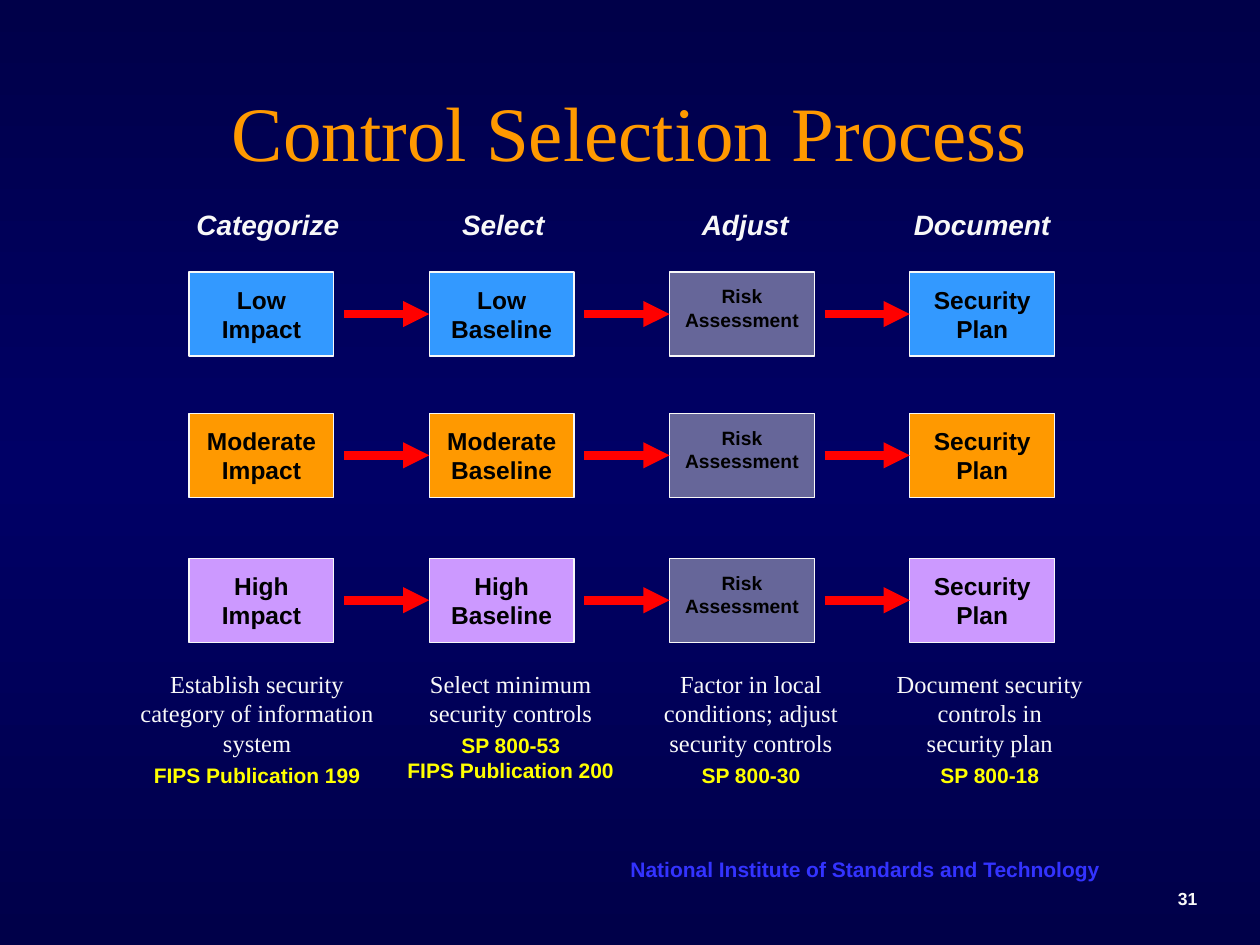
from copy import deepcopy

from lxml import etree
from pptx import Presentation
from pptx.dml.color import RGBColor
from pptx.enum import shapes, text
from pptx.oxml import ns
from pptx.util import Pt

NAVY = RGBColor(0x00, 0x00, 0x49)
DEEP_BLUE = RGBColor(0x00, 0x00, 0x66)
LINK_BLUE = RGBColor(0x33, 0x33, 0xFF)
BLUE = RGBColor(0x33, 0x99, 0xFF)
ORANGE = RGBColor(0xFF, 0x99, 0x00)
LILAC = RGBColor(0xCC, 0x99, 0xFF)
SLATE = RGBColor(0x66, 0x66, 0x99)
RED = RGBColor(0xFF, 0x00, 0x00)
YELLOW = RGBColor(0xFF, 0xFF, 0x00)
WHITE = RGBColor(0xF8, 0xF8, 0xF8)
BLACK = RGBColor(0x00, 0x00, 0x00)

SANS, SERIF = "Arial", "Times New Roman"
BOX_LEFT, COLUMN_STEP = 108, 137.3
BOX_WIDTH, BOX_HEIGHT = 82.8, 48
ARROW_GAP = 5.8

LEVELS = [("Low", BLUE, 155.5), ("Moderate", ORANGE, 236.2), ("High", LILAC, 319)]
STEPS = [("Categorize", 90), ("Select", 224.6), ("Adjust", 362.9), ("Document", 498.2)]
NOTES = [
    (68.4, 157, "Establish security\ncategory of information system", "FIPS Publication 199"),
    (221, 141.8, "Select minimum\nsecurity controls", "SP 800-53\nFIPS Publication 200"),
    (366.5, 125.3, "Factor in local\nconditions; adjust\nsecurity controls", "SP 800-30"),
    (491.8, 147.6, "Document security\ncontrols in\nsecurity plan", "SP 800-18"),
]


def paint_background(slide):
    fill = slide.background.fill
    fill.gradient()
    fill.gradient_angle = 90
    stops = slide.element.find(".//" + ns.qn("a:gsLst"))
    stops.insert(1, deepcopy(stops[0]))
    for stop, color, position in zip(fill.gradient_stops, (NAVY, DEEP_BLUE, NAVY), (0, 0.5, 1)):
        stop.color.rgb = color
        stop.position = position


def format_paragraph(paragraph, size, color, font=SANS, bold=True, italic=False,
                     align=text.PP_ALIGN.CENTER):
    paragraph.alignment = align
    for run in paragraph.runs:
        run.font.size = Pt(size)
        run.font.color.rgb = color
        run.font.name = font
        run.font.bold = bold
        run.font.italic = italic


def add_text(slide, left, top, width, height, wording, size, color, **style):
    frame = slide.shapes.add_textbox(Pt(left), Pt(top), Pt(width), Pt(height)).text_frame
    frame.word_wrap = True
    frame.text = wording
    for paragraph in frame.paragraphs:
        format_paragraph(paragraph, size, color, **style)
    return frame


def add_box(slide, left, top, color, wording, size):
    box = slide.shapes.add_shape(shapes.MSO_SHAPE.RECTANGLE, Pt(left), Pt(top),
                                 Pt(BOX_WIDTH), Pt(BOX_HEIGHT))
    box.shadow.inherit = False
    box.fill.solid()
    box.fill.fore_color.rgb = color
    box.line.color.rgb = WHITE
    box.line.width = Pt(0.75)
    add_text(slide, left, top + 3.6, BOX_WIDTH, 3 * size - 1, wording, size, BLACK)
    return box


def add_arrow(slide, start, target):
    middle = target.top + target.height // 2
    arrow = slide.shapes.add_connector(shapes.MSO_CONNECTOR.STRAIGHT, Pt(start), middle,
                                       target.left, middle)
    arrow.end_connect(target, 1)
    arrow.line.color.rgb = RED
    arrow.line.width = Pt(5)
    etree.SubElement(arrow.line._get_or_add_ln(), ns.qn("a:tailEnd"), type="triangle")
    etree.SubElement(arrow.element.spPr, ns.qn("a:effectLst"))


def add_level(slide, level, color, top):
    stages = [
        (f"{level}\nImpact", color, 14),
        (f"{level}\nBaseline", color, 14),
        ("Risk\nAssessment", SLATE, 11),
        ("Security\nPlan", color, 14),
    ]
    for column, (wording, fill, size) in enumerate(stages):
        left = BOX_LEFT + column * COLUMN_STEP
        box = add_box(slide, left, top, fill, wording, size)
        if column:
            add_arrow(slide, left - COLUMN_STEP + BOX_WIDTH + ARROW_GAP, box)


def add_note(slide, left, width, task, publications):
    frame = add_text(slide, left, 378.7, width, 75.6, task, 14, WHITE, font=SERIF, bold=False)
    frame.paragraphs[-1].space_after = Pt(2.8)
    for publication in publications.split("\n"):
        reference = frame.add_paragraph()
        reference.text = publication
        format_paragraph(reference, 12, YELLOW)


def main():
    deck = Presentation()
    deck.slide_width, deck.slide_height = Pt(720), Pt(540)
    slide = deck.slides.add_slide(deck.slide_layouts[6])
    paint_background(slide)

    add_text(slide, 59.8, 486, 576, 21.6, "National Institute of Standards and Technology",
             12, LINK_BLUE, align=text.PP_ALIGN.RIGHT)
    add_text(slide, 666, 504, 30.2, 19.4, "31", 10, WHITE, align=text.PP_ALIGN.LEFT)
    title = add_text(slide, 54, 36, 612, 77.8, "Control Selection Process", 44, ORANGE,
                     font=SERIF, bold=False)
    title.vertical_anchor = text.MSO_ANCHOR.MIDDLE

    for level in LEVELS:
        add_level(slide, *level)
    for note in NOTES:
        add_note(slide, *note)
    for step, left in STEPS:
        add_text(slide, left, 115.2, 126, 26.6, step, 16, WHITE, italic=True)

    deck.save("out.pptx")


if __name__ == "__main__":
    main()
